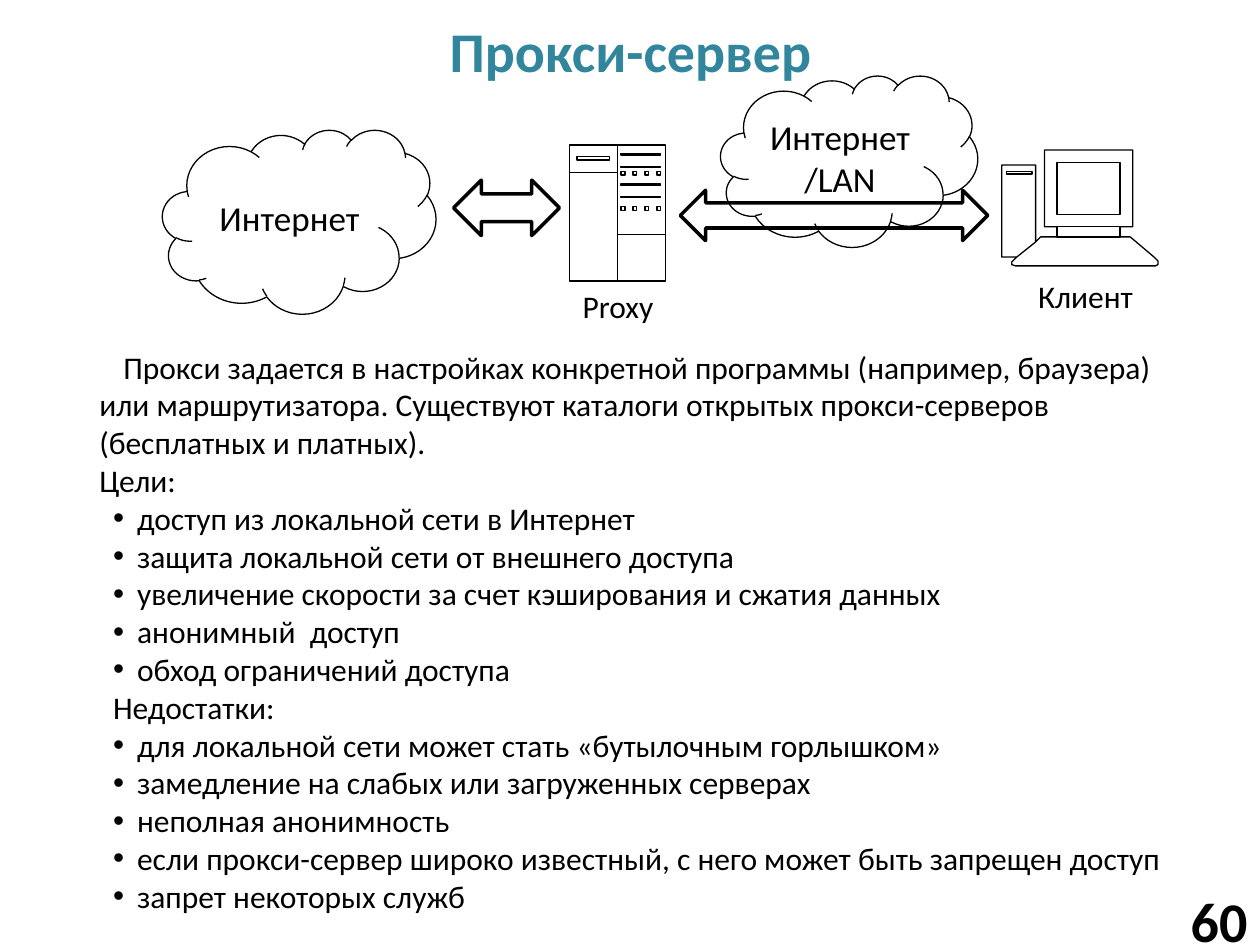
import pptx
import pptx.util
import pptx.dml.color
import pptx.enum.shapes
import pptx.enum.text
from lxml import etree

Inches, Pt = pptx.util.Inches, pptx.util.Pt
SHAPE = pptx.enum.shapes.MSO_SHAPE
ALIGN = pptx.enum.text.PP_ALIGN
MIDDLE = pptx.enum.text.MSO_ANCHOR.MIDDLE
TOP = pptx.enum.text.MSO_ANCHOR.TOP
COLORS = {"ink": "000000", "paper": "FFFFFF", "title": "31859C"}
RGB = {k: pptx.dml.color.RGBColor.from_string(v) for k, v in COLORS.items()}


def write(sp, lines, size, align=ALIGN.CENTER, color="ink", bold=False, anchor=MIDDLE):
    tf = sp.text_frame
    tf.word_wrap = True
    tf.vertical_anchor = anchor
    font = {"name": "Calibri", "size": Pt(size), "bold": bold}
    for i, line in enumerate(lines):
        p = tf.paragraphs[0] if i == 0 else tf.add_paragraph()
        p.alignment = align
        r = p.add_run()
        r.text = line
        for key, value in font.items():
            setattr(r.font, key, value)
        r.font.color.rgb = RGB[color]


def outline(sp, width=0.75, filled=True):
    sp.shadow.inherit = False
    if filled:
        sp.fill.solid()
        sp.fill.fore_color.rgb = RGB["paper"]
    else:
        sp.fill.background()
    sp.line.color.rgb = RGB["ink"]
    sp.line.width = Pt(width)


prs = pptx.Presentation()
prs.slide_width, prs.slide_height = Inches(10), Inches(7.5)
s = prs.slides.add_slide(prs.slide_layouts[5])

# Title
title = s.shapes.title
place = {"left": 0.28, "top": 0.05, "width": 9.45, "height": 0.69}
for key, value in place.items():
    setattr(title, key, Inches(value))
write(title, ["Прокси-сервер"], 32, color="title", bold=True)

# Clouds, then the arrows over them
clouds = [
    ("Интернет/LAN", (5.72, 0.6, 2.04, 1.36)),
    ("Интернет", (1.29, 1.03, 2.17, 1.46)),
]
for label, box in clouds:
    sp = s.shapes.add_shape(SHAPE.CLOUD, *map(Inches, box))
    outline(sp)
    write(sp, [label], 20)

arrows = [((3.6, 1.43, 0.84, 0.44), True), ((5.4, 1.51, 2.44, 0.4), False)]
for box, filled in arrows:
    sp = s.shapes.add_shape(SHAPE.LEFT_RIGHT_ARROW, *map(Inches, box))
    outline(sp, 2, filled)

# Proxy server and client computer: rectangles are (left, top, right, bottom)
server_rects = [(4.52, 1.15, 5.28, 2.23), (4.58, 1.24, 4.84, 1.27)]
server_rects += [(4.93, y, 5.24, y + 0.01) for y in (1.22, 1.32, 1.46, 1.56)]
server_rects += [
    (4.93 + 0.095 * i, y, 4.96 + 0.095 * i, y + 0.03)
    for y in (1.36, 1.64) for i in range(4)
]
server_lines = [
    [(4.52, 1.37), (4.9, 1.37)],
    [(4.9, 1.15), (4.9, 2.23)],
    [(4.9, 1.86), (5.28, 1.86)],
]
client_outline = [
    (8.22, 1.92), (8.26, 1.88), (8.39, 1.88), (8.39, 1.8), (8.29, 1.8), (8.29, 1.19),
    (8.99, 1.19), (8.99, 1.8), (8.89, 1.8), (8.89, 1.88), (8.97, 1.88), (9.16, 2.04),
    (9.19, 2.07), (9.19, 2.1), (9.17, 2.11), (8.06, 2.11), (8.03, 2.1), (8.03, 2.08),
    (8.07, 2.04), (7.95, 2.04), (7.95, 1.31), (8.22, 1.31), (8.22, 1.92), (8.07, 2.04),
]
client_rects = [(8.39, 1.29, 8.89, 1.7), (7.99, 1.36, 8.19, 1.38), (8.39, 1.8, 8.89, 1.88)]

devices = [(server_lines, server_rects), ([client_outline], client_rects)]
for lines, rects in devices:
    contours = [
        [(l, t), (r, t), (r, b), (l, b), (l, t)] for l, t, r, b in rects
    ] + lines
    contours = [[(Inches(x), Inches(y)) for x, y in points] for points in contours]
    fb = s.shapes.build_freeform(*contours[0][0])
    for i, points in enumerate(contours):
        if i:
            fb.move_to(*points[0])
        fb.add_line_segments(points[1:], close=False)
    outline(fb.convert_to_shape())

for label, left, top in [("Proxy", 4.36, 2.23), ("Клиент", 8.07, 2.15)]:
    sp = s.shapes.add_textbox(Inches(left), Inches(top), Inches(1.09), Inches(0.4))
    write(sp, [label], 18, anchor=TOP)

# Explanation
intro = [
    "Прокси задается в настройках конкретной программы (например, браузера) "
    "или маршрутизатора. Существуют каталоги открытых прокси-серверов "
    "(бесплатных и платных).",
    "Цели:",
]
goals = [
    "доступ из локальной сети в Интернет",
    "защита локальной сети от внешнего доступа",
    "увеличение скорости за счет кэширования и сжатия данных",
    "анонимный  доступ",
    "обход ограничений доступа",
]
drawbacks = [
    "для локальной сети может стать «бутылочным горлышком»",
    "замедление на слабых или загруженных серверах",
    "неполная анонимность",
    "если прокси-сервер широко известный, с него может быть запрещен доступ",
    "запрет некоторых служб",
]
body = s.shapes.add_textbox(Inches(0.69), Inches(2.71), Inches(8.67), Inches(4.64))
write(body, intro + goals + ["Недостатки:"] + drawbacks, 18, ALIGN.LEFT, anchor=TOP)
paragraphs = body.text_frame.paragraphs
paragraphs[0]._p.get_or_add_pPr().set("indent", str(Inches(0.19)))
for p in paragraphs[len(intro):]:
    pPr = p._p.get_or_add_pPr()
    pPr.set("marL", str(Inches(0.3)))
    pPr.set("indent", str(Inches(-0.19)))
    if p.text in goals + drawbacks:
        ns = pptx.oxml.ns.qn
        etree.SubElement(pPr, ns("a:buFont")).set("typeface", "Arial")
        etree.SubElement(pPr, ns("a:buChar")).set("char", "•")

# Slide number
number = s.shapes.add_textbox(Inches(8.86), Inches(7.1), Inches(1.14), Inches(0.4))
number.text_frame.margin_right = Inches(0.1)
write(number, ["60"], 32, ALIGN.RIGHT, bold=True)

prs.save("out.pptx")
